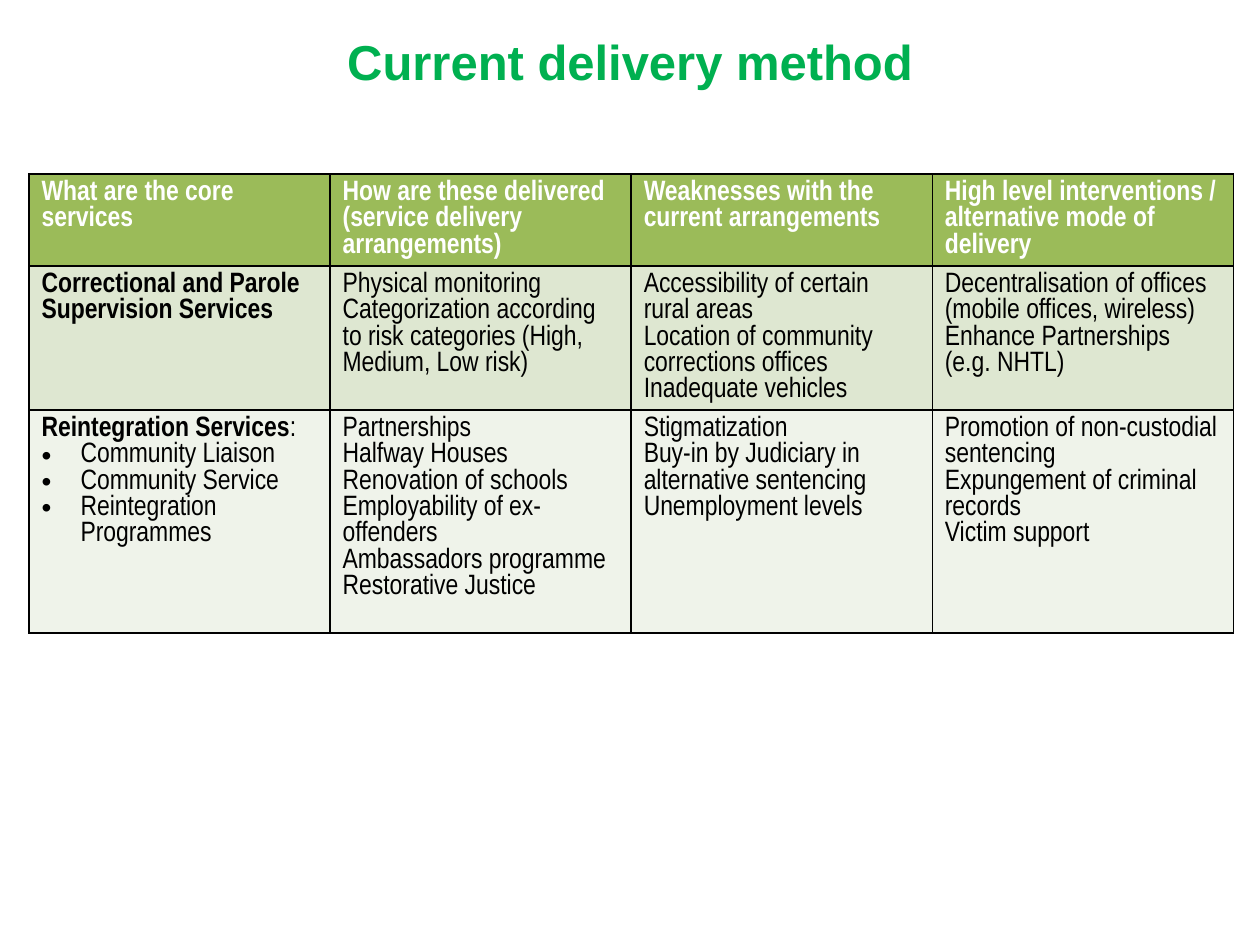
from lxml import etree
from pptx import Presentation
from pptx.dml.color import RGBColor
from pptx.enum.text import MSO_ANCHOR, PP_ALIGN
from pptx.oxml.ns import qn
from pptx.util import Inches, Pt

CENTER, MIDDLE = PP_ALIGN.CENTER, MSO_ANCHOR.MIDDLE
WIDE, HIGH = 10, 7.5
LEFT, TOP, COL = 0.23, 1.38, 2.39
ROWS = [0.73, 1.14, 1.77]
FILLS = ["9BBB59", "DEE7D1", "EFF3EA"]
BULLET = "• "

# One list of paragraphs for each cell
CELLS = [
    [["What are the core services"],
     ["How are these delivered", "(service delivery arrangements)"],
     ["Weaknesses with the current arrangements"],
     ["High level interventions / alternative mode of delivery"]],
    [["Correctional and Parole Supervision Services"],
     ["Physical monitoring",
      "Categorization according to risk categories (High, Medium, Low risk)"],
     ["Accessibility of certain rural areas",
      "Location of community corrections offices", "Inadequate vehicles"],
     ["Decentralisation of offices (mobile offices, wireless)",
      "Enhance Partnerships (e.g. NHTL)"]],
    [["Reintegration Services:", "• Community Liaison", "• Community Service",
      "• Reintegration Programmes"],
     ["Partnerships", "Halfway Houses", "Renovation of schools",
      "Employability of ex-offenders", "Ambassadors programme",
      "Restorative Justice"],
     ["Stigmatization", "Buy-in by Judiciary in alternative sentencing",
      "Unemployment levels"],
     ["Promotion of non-custodial sentencing",
      "Expungement of criminal records", "Victim support"]],
]


def color(code):
    return RGBColor.from_string(code)


def write(para, text, size=16, face="Arial Narrow", ink="000000", bold=False):
    run = para.add_run()
    run.text = text
    font = run.font
    font.size, font.name, font.bold = Pt(size), face, bold
    font.color.rgb = color(ink)


def add_bullet(para):
    props = para._p.get_or_add_pPr()
    props.set("marL", str(Inches(0.31)))
    props.set("indent", str(Inches(-0.31)))
    etree.SubElement(props, qn("a:buFont"), typeface="Arial")
    etree.SubElement(props, qn("a:buChar"), char=BULLET.strip())


def add_border(cell, ink="000000", width=1):
    props = cell._tc.get_or_add_tcPr()
    for side in ("lnL", "lnR", "lnT", "lnB"):
        line = etree.SubElement(props, qn("a:" + side), w=str(Pt(width)))
        fill = etree.SubElement(line, qn("a:solidFill"))
        etree.SubElement(fill, qn("a:srgbClr"), val=ink)


def fill_cell(cell, lines, back, ink, bold):
    add_border(cell)
    cell.fill.solid()
    cell.fill.fore_color.rgb = color(back)
    frame = cell.text_frame
    for num, line in enumerate(lines):
        para = frame.add_paragraph() if num else frame.paragraphs[0]
        point = line.startswith(BULLET)
        if point:
            add_bullet(para)
        text = line.removeprefix(BULLET)
        strong = bold and not point
        write(para, text.removesuffix(":"), ink=ink, bold=strong)
        if text.endswith(":"):
            write(para, ":", ink=ink)


def add_grid(slide):
    count = len(CELLS[0])
    table = slide.shapes.add_table(
        len(ROWS), count, Inches(LEFT), Inches(TOP),
        Inches(COL * count), Inches(sum(ROWS))).table
    for col in table.columns:
        col.width = Inches(COL)
    for r, row in enumerate(CELLS):
        table.rows[r].height = Inches(ROWS[r])
        for c, lines in enumerate(row):
            fill_cell(table.cell(r, c), lines, FILLS[r],
                      ink="000000" if r else "FFFFFF",
                      bold=r == 0 or c == 0)


def add_title(slide, text):
    title = slide.shapes.title
    title.left, title.top = Inches(0.5), Inches(0.2)
    title.width, title.height = Inches(WIDE - 1), Inches(0.57)
    frame = title.text_frame
    frame.word_wrap = True
    frame.vertical_anchor = MIDDLE
    para = frame.paragraphs[0]
    para.alignment = CENTER
    write(para, text, size=28, face="Arial", ink="00B050", bold=True)


def main():
    deck = Presentation()
    deck.slide_width, deck.slide_height = Inches(WIDE), Inches(HIGH)
    slide = deck.slides.add_slide(deck.slide_layouts.get_by_name("Title Only"))
    add_title(slide, "Current delivery method")
    add_grid(slide)
    deck.save("out.pptx")


if __name__ == "__main__":
    main()
